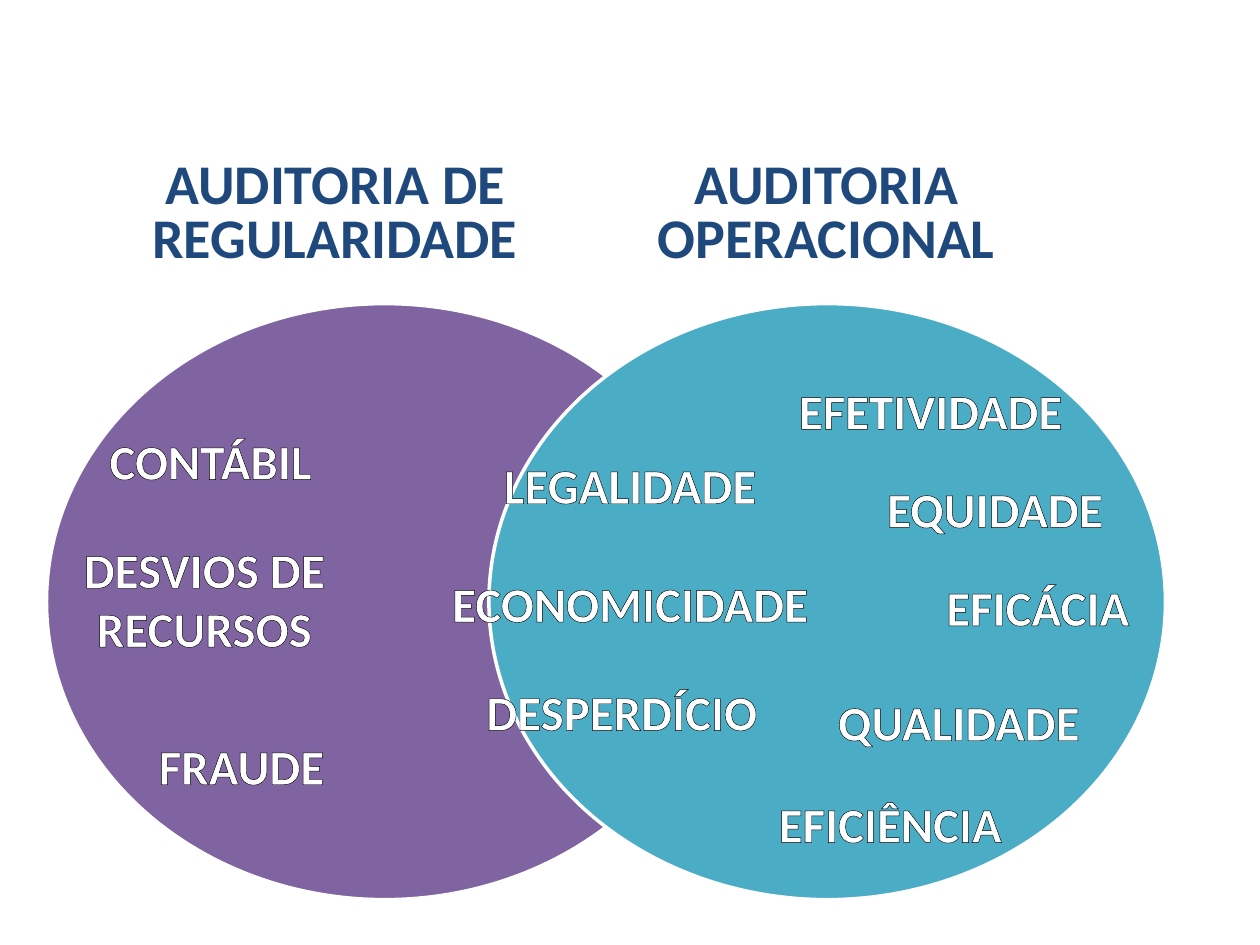
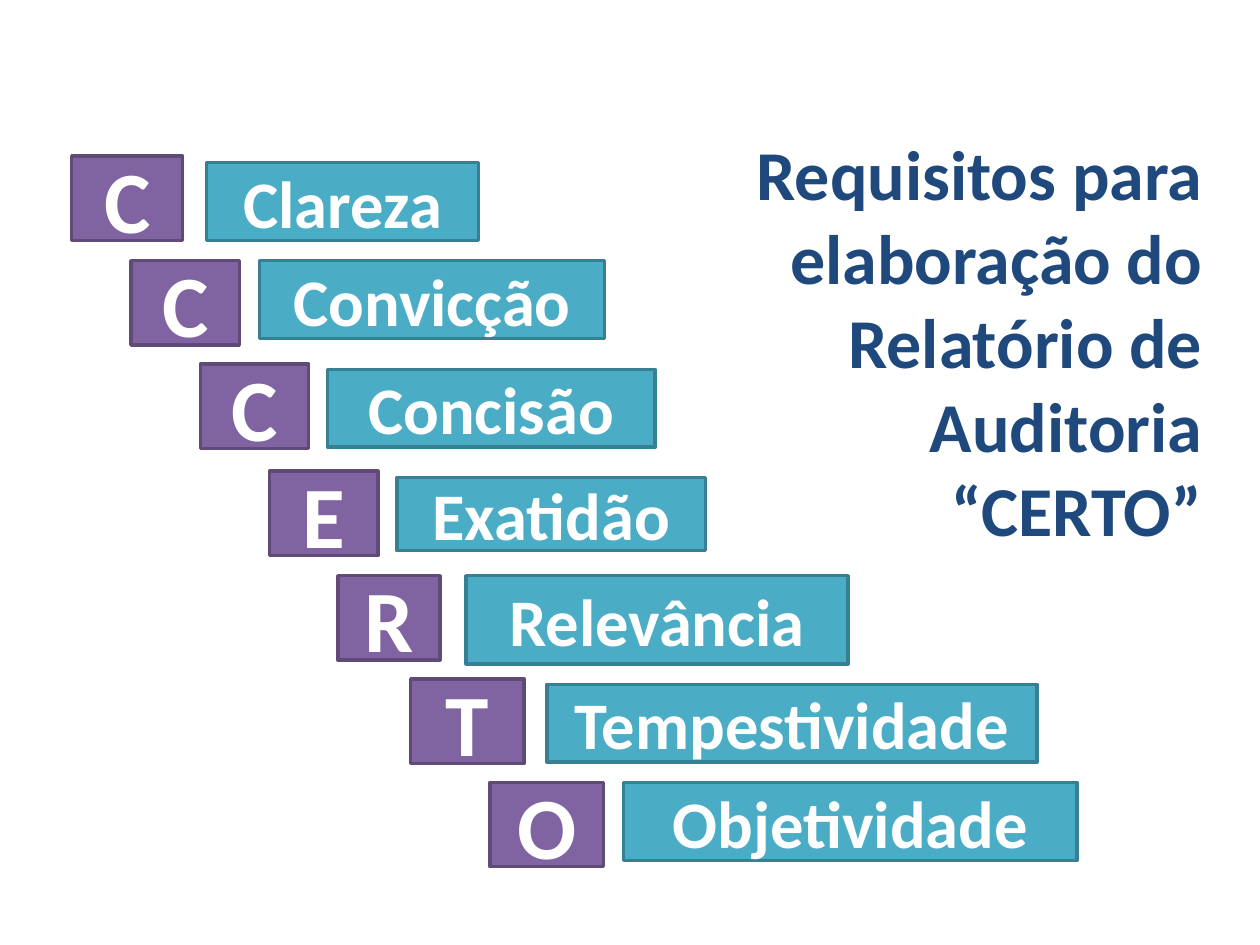
from lxml.etree import SubElement
from pptx import Presentation
from pptx.dml.color import RGBColor
from pptx.enum.shapes import MSO_SHAPE
from pptx.enum.text import MSO_ANCHOR, MSO_AUTO_SIZE, PP_ALIGN
from pptx.oxml.ns import qn
from pptx.util import Pt

COLORS = {
    "purple": "8064A2",
    "purple_edge": "5F4A78",
    "teal": "4BACC6",
    "teal_edge": "377F92",
    "navy": "1F497D",
    "white": "FFFFFF",
    "black": "000000",
}
FONT = "Calibri"
LEFT, CENTER, RIGHT = PP_ALIGN.LEFT, PP_ALIGN.CENTER, PP_ALIGN.RIGHT


def write(box, text, size, color="white", align=CENTER, spacing=None,
          side_inset=7.2, anchor=MSO_ANCHOR.TOP, wrap=True, grow=False, outline=None):
    """Fill a shape with bold text, one paragraph per line."""
    frame = box.text_frame
    frame.word_wrap = wrap
    frame.vertical_anchor = anchor
    frame.margin_left = frame.margin_right = Pt(side_inset)
    frame.margin_top = frame.margin_bottom = Pt(3.6)
    frame.auto_size = MSO_AUTO_SIZE.SHAPE_TO_FIT_TEXT if grow else MSO_AUTO_SIZE.NONE
    for number, line in enumerate(text.split("\n")):
        para = frame.paragraphs[0] if number == 0 else frame.add_paragraph()
        para.alignment = align
        if spacing:
            para.line_spacing = spacing
        span = para.add_run()
        span.text = line
        span.font.name = FONT
        span.font.size = Pt(size)
        span.font.bold = True
        span.font.color.rgb = RGBColor.from_string(COLORS[color])
        if outline:
            properties = span.font._element
            edge = SubElement(properties, qn("a:ln"), w=str(Pt(0.75)))
            fill = SubElement(edge, qn("a:solidFill"))
            SubElement(fill, qn("a:srgbClr"), val=COLORS[outline])
            properties.insert(0, edge)


def add_block(page, kind, left, top, width, height, fill, edge):
    """Draw a filled shape with a 2 pt edge and no shadow."""
    block = page.shapes.add_shape(kind, Pt(left), Pt(top), Pt(width), Pt(height))
    block.shadow.inherit = False
    block.fill.solid()
    block.fill.fore_color.rgb = RGBColor.from_string(COLORS[fill])
    block.line.color.rgb = RGBColor.from_string(COLORS[edge])
    block.line.width = Pt(2)
    return block


deck = Presentation()
deck.slide_width, deck.slide_height = Pt(720), Pt(540)
blank = deck.slide_layouts[6]

# Slide 1: two overlapping kinds of audit
page = deck.slides.add_slide(blank)
for left, fill in ((26.6, "purple"), (279.4, "teal")):
    add_block(page, MSO_SHAPE.OVAL, left, 173.5, 386.6, 340.6, fill, "white")

# Topics: text, left, top, width, height, alignment, line spacing
topics = [
    ("CONTÁBIL", 48.2, 242.6, 247.7, 41, LEFT, None),
    ("DESVIOS DE\nRECURSOS", -19.4, 304.6, 272.2, 74.9, CENTER, None),
    ("FRAUDE", 76.3, 416.9, 149.8, 41, LEFT, None),
    ("LEGALIDADE", 238.3, 262.8, 243.4, 35.3, CENTER, 0.8),
    ("ECONOMICIDADE", 211, 330.5, 298.1, 35.3, CENTER, 0.8),
    ("DESPERDÍCIO", 263.5, 392.4, 250.6, 35.3, LEFT, 0.8),
    ("EFETIVIDADE", 442.1, 220.3, 321.8, 35.3, LEFT, 0.8),
    ("EQUIDADE", 492.5, 276.5, 265, 35.3, LEFT, 0.8),
    ("EFICÁCIA", 526.3, 332.6, 236.2, 35.3, LEFT, 0.8),
    ("QUALIDADE", 464.4, 398.2, 288, 35.3, LEFT, 0.8),
    ("EFICIÊNCIA", 430.6, 456.5, 278.6, 35.3, LEFT, 0.8),
]
for text, left, top, width, height, align, spacing in topics:
    box = page.shapes.add_textbox(Pt(left), Pt(top), Pt(width), Pt(height))
    write(box, text, size=28, align=align, spacing=spacing, side_inset=14.4,
          grow=True, outline="black")

# Headings above the ellipses
for text, left, width in (("AUDITORIA DE REGULARIDADE", -3.6, 390.2),
                          ("AUDITORIA OPERACIONAL", 313.2, 318.2)):
    box = page.shapes.add_textbox(Pt(left), Pt(88.6), Pt(width), Pt(69.8))
    write(box, text, size=32, color="navy", spacing=0.8, side_inset=14.4, grow=True)

# Slide 2: report requirements
page = deck.slides.add_slide(blank)
box = page.shapes.add_textbox(Pt(382.3), Pt(71.3), Pt(311.8), Pt(56.9))
write(box, "Requisitos para elaboração do Relatório de Auditoria\n“CERTO”",
      size=40, color="navy", align=RIGHT)

# Staircase: word, then letter left, top, width, then word left, top, width, height
steps = [
    ("Clareza", 41, 89.3, 63.4, 118.1, 92.9, 155.5, 44.6),
    ("Convicção", 74.9, 149, 61.9, 148.3, 149, 197.3, 44.6),
    ("Concisão", 114.5, 208.1, 61.9, 187.2, 211, 187.2, 44.6),
    ("Exatidão", 154.1, 269.3, 61.9, 226.8, 272.9, 176.4, 41.8),
    ("Relevância", 193, 329, 58.3, 266.4, 329, 218.2, 50.4),
    ("Tempestividade", 234.7, 388.1, 64.8, 312.5, 391, 280.1, 44.6),
    ("Objetividade", 280.1, 447.1, 64.8, 356.4, 447.1, 259.2, 44.6),
]
for word, letter_left, letter_top, letter_width, *word_place in steps:
    letter_box = add_block(page, MSO_SHAPE.RECTANGLE, letter_left, letter_top,
                           letter_width, 48.2, "purple", "purple_edge")
    write(letter_box, word[0], size=50, anchor=MSO_ANCHOR.MIDDLE, wrap=False)
    word_box = add_block(page, MSO_SHAPE.RECTANGLE, *word_place, "teal", "teal_edge")
    write(word_box, word, size=38, anchor=MSO_ANCHOR.MIDDLE, wrap=False)

deck.save("out.pptx")
